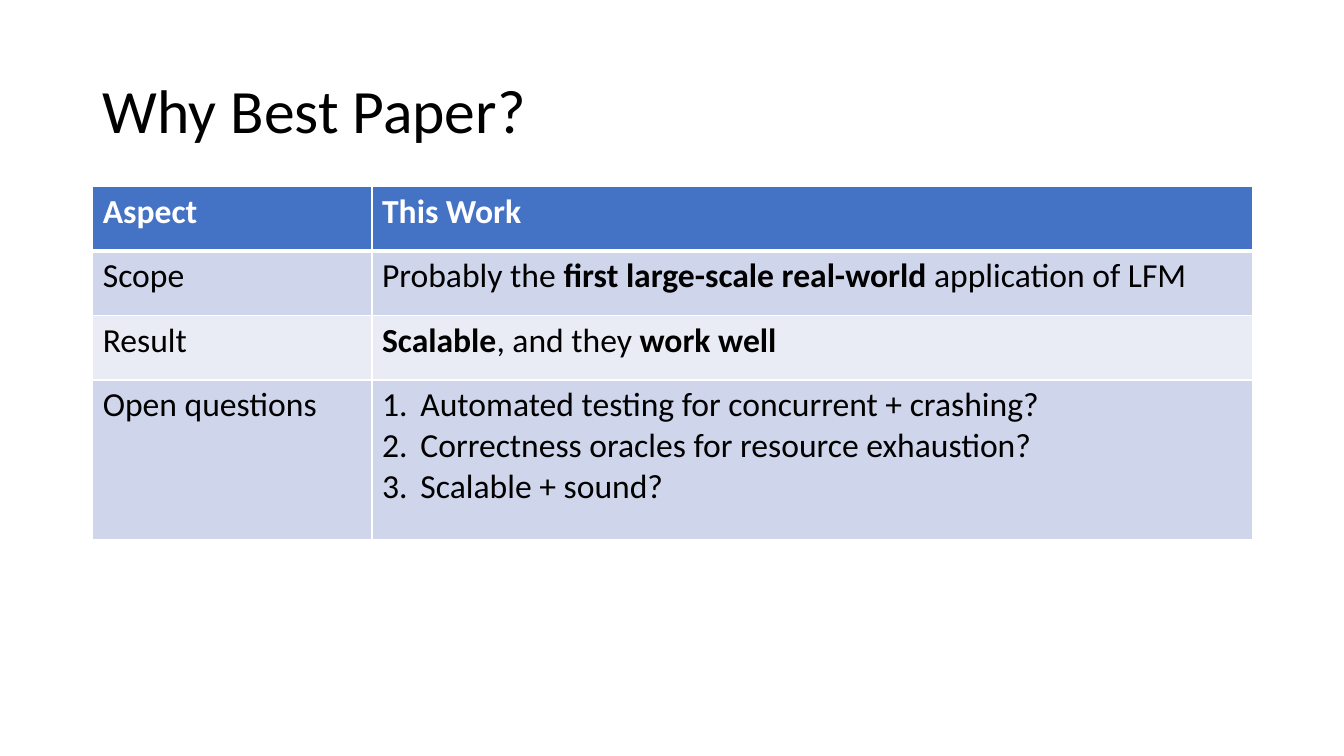
from lxml.etree import SubElement
from pptx import Presentation
from pptx.dml.color import RGBColor
from pptx.enum.text import MSO_ANCHOR, MSO_AUTO_SIZE, PP_ALIGN
from pptx.oxml.ns import qn
from pptx.util import Emu, Inches, Pt

TITLE = "Why Best Paper?"
HEADER = ("Aspect", "This Work")
# Each detail is a list of paragraphs; each paragraph is a list of (text, bold).
ASPECTS = [
    ("Scope", [[("Probably the ", False),
                ("first large-scale real-world ", True),
                ("application of LFM", False)]]),
    ("Result", [[("Scalable", True), (", and they ", False), ("work well", True)]]),
    ("Open questions", [[("Automated testing for concurrent + crashing?", False)],
                        [("Correctness oracles for resource exhaustion?", False)],
                        [("Scalable + sound?", False)]]),
]

FONT = "Calibri"
BLACK, WHITE = "000000", "FFFFFF"
HEADER_FILL, BAND_FILLS = "4472C4", ("CFD5EA", "E9EBF5")
SLIDE_W, SLIDE_H = Inches(13.33), Inches(7.5)
LEFT, CONTENT_W = Inches(0.92), Inches(11.5)
TITLE_TOP, TITLE_H = Inches(0.4), Inches(1.45)
COLUMN_WIDTHS = (2.77, 8.73)
ROW_HEIGHTS = (0.64, 0.64, 0.64, 1.58)
LIST_INDENT = Inches(0.38)


def rgb(color):
    return RGBColor.from_string(color)


def style_run(run, size, color, bold=False):
    run.font.name = FONT
    run.font.size = Pt(size)
    run.font.bold = bold
    run.font.color.rgb = rgb(color)


def add_borders(cell, bottom_width):
    properties = cell._tc.get_or_add_tcPr()
    for side, width in (("L", 1), ("R", 1), ("T", 1), ("B", bottom_width)):
        line = SubElement(properties, qn(f"a:ln{side}"), w=str(Pt(width)))
        SubElement(SubElement(line, qn("a:solidFill")), qn("a:srgbClr"), val=WHITE)


def number_paragraph(paragraph):
    properties = paragraph._p.get_or_add_pPr()
    properties.set("marL", str(LIST_INDENT))
    properties.set("indent", str(-LIST_INDENT))
    SubElement(properties, qn("a:buFont"), typeface="+mj-lt")
    SubElement(properties, qn("a:buAutoNum"), type="arabicPeriod")


def fill_cell(cell, paragraphs, fill, color, bottom_width=1):
    """Write the paragraphs, numbering them when there are several."""
    add_borders(cell, bottom_width)
    cell.fill.solid()
    cell.fill.fore_color.rgb = rgb(fill)
    frame = cell.text_frame
    for index, parts in enumerate(paragraphs):
        paragraph = frame.add_paragraph() if index else frame.paragraphs[0]
        if len(paragraphs) > 1:
            number_paragraph(paragraph)
        for text, bold in parts:
            run = paragraph.add_run()
            run.text = text
            style_run(run, 24, color, bold)


def add_title(slide):
    title = slide.shapes.title
    title.left, title.top, title.width, title.height = LEFT, TITLE_TOP, CONTENT_W, TITLE_H
    frame = title.text_frame
    frame.text = TITLE
    frame.word_wrap = True
    frame.auto_size = MSO_AUTO_SIZE.NONE
    frame.vertical_anchor = MSO_ANCHOR.MIDDLE
    paragraph = frame.paragraphs[0]
    paragraph.alignment = PP_ALIGN.LEFT
    paragraph.line_spacing = 0.9
    style_run(paragraph.runs[0], 44, BLACK)


def add_aspect_table(slide):
    table = slide.shapes.add_table(
        len(ROW_HEIGHTS), len(COLUMN_WIDTHS), LEFT, Emu(TITLE_TOP + TITLE_H),
        CONTENT_W, Inches(sum(ROW_HEIGHTS))).table
    for column, width in zip(table.columns, COLUMN_WIDTHS):
        column.width = Inches(width)
    for row, height in zip(table.rows, ROW_HEIGHTS):
        row.height = Inches(height)

    for column, heading in enumerate(HEADER):
        fill_cell(table.cell(0, column), [[(heading, True)]], HEADER_FILL, WHITE, 3)
    for row, (aspect, details) in enumerate(ASPECTS, start=1):
        band = BAND_FILLS[(row - 1) % 2]
        fill_cell(table.cell(row, 0), [[(aspect, False)]], band, BLACK)
        fill_cell(table.cell(row, 1), details, band, BLACK)


def main():
    deck = Presentation()
    deck.slide_width, deck.slide_height = SLIDE_W, SLIDE_H
    slide = deck.slides.add_slide(deck.slide_layouts[5])
    add_title(slide)
    add_aspect_table(slide)
    deck.save("out.pptx")


if __name__ == "__main__":
    main()
